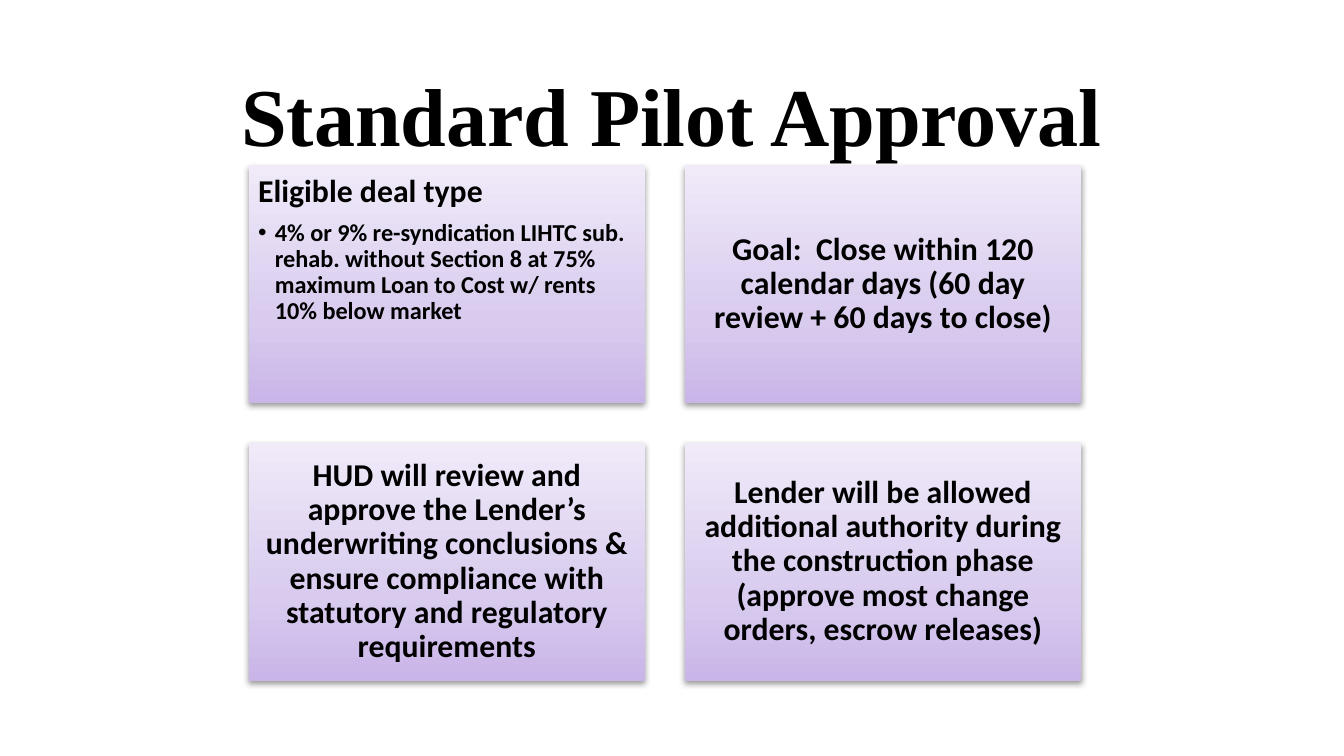
from dataclasses import dataclass

from lxml import etree
from pptx import Presentation
from pptx.dml.color import RGBColor
from pptx.enum.shapes import MSO_SHAPE
from pptx.enum.text import MSO_ANCHOR, MSO_AUTO_SIZE, PP_ALIGN
from pptx.oxml.ns import qn
from pptx.shapes.autoshape import Shape
from pptx.slide import Slide
from pptx.util import Emu, Pt

RECTANGLE = MSO_SHAPE.RECTANGLE
TOP, MIDDLE = MSO_ANCHOR.TOP, MSO_ANCHOR.MIDDLE
LEFT, CENTER = PP_ALIGN.LEFT, PP_ALIGN.CENTER
NO_AUTOFIT = MSO_AUTO_SIZE.NONE
EMU_PER_PX = 4572  # 200 px to the inch


@dataclass(frozen=True)
class Theme:
    ink: str = "000000"
    shadow: str = "000000"
    gradient: tuple[tuple[int, str], ...] = (
        (0, "C9B5E8"), (35, "D8CBEE"), (100, "F0EAF9"))
    title_font: str = "Times New Roman"
    body_font: str = "Calibri"
    title_size: int = 44
    heading_size: int = 17
    bullet_size: int = 13


@dataclass(frozen=True)
class Card:
    heading: str
    bullets: tuple[str, ...] = ()


THEME = Theme()

# Page and card grid, in px
PAGE_WIDTH, PAGE_HEIGHT = 2000, 1125
GRID_LEFT, GRID_TOP = 370, 246
CARD_WIDTH, CARD_HEIGHT = 590, 354
GAP, COLUMNS = 59, 2
INSET, BULLET_INDENT = 14, 25

CARDS = (
    Card("Eligible deal type", (
        "4% or 9% re-syndication LIHTC sub. rehab. without Section 8 at 75% "
        "maximum Loan to Cost w/ rents 10% below market",)),
    Card("Goal:  Close within 120 calendar days "
         "(60 day review + 60 days to close)"),
    Card("HUD will review and approve the Lender’s underwriting conclusions & "
         "ensure compliance with statutory and regulatory requirements"),
    Card("Lender will be allowed additional authority during the construction "
         "phase (approve most change orders, escrow releases)"),
)


def px(length: int) -> Emu:
    return Emu(length * EMU_PER_PX)


def place(shape: Shape, left: int, top: int, width: int, height: int) -> None:
    shape.left, shape.top = px(left), px(top)
    shape.width, shape.height = px(width), px(height)


def style_font(para, name: str, size: int) -> None:
    font = para.font
    font.name, font.size, font.bold = name, Pt(size), True
    font.color.rgb = RGBColor.from_string(THEME.ink)


def add_color(parent, color: str):
    return etree.SubElement(parent, qn("a:srgbClr"), val=color)


def paint_card(box: Shape) -> None:
    """Three-stop gradient, no outline and a soft shadow below."""
    box.line.fill.background()
    box.fill.gradient()
    box.fill.gradient_angle = 90
    properties = box.element.spPr
    stops = properties.find(f"{qn('a:gradFill')}/{qn('a:gsLst')}")
    for stop in list(stops):
        stops.remove(stop)
    for position, color in THEME.gradient:
        stop = etree.SubElement(stops, qn("a:gs"), pos=str(position * 1000))
        add_color(stop, color)

    box.shadow.inherit = False
    shadow = etree.SubElement(
        properties.find(qn("a:effectLst")), qn("a:outerShdw"),
        blurRad="40000", dist="20000", dir="5400000", rotWithShape="0")
    etree.SubElement(add_color(shadow, THEME.shadow), qn("a:alpha"), val="38000")


def add_bullet(para) -> None:
    properties = para._p.get_or_add_pPr()
    properties.set("marL", str(px(BULLET_INDENT)))
    properties.set("indent", str(-px(BULLET_INDENT)))
    etree.SubElement(properties, qn("a:buFont"), typeface="Arial")
    etree.SubElement(properties, qn("a:buChar"), char="•")


def add_card(page: Slide, card: Card, left: int, top: int) -> None:
    box = page.shapes.add_shape(
        RECTANGLE, px(left), px(top), px(CARD_WIDTH), px(CARD_HEIGHT))
    paint_card(box)
    frame = box.text_frame
    frame.word_wrap = True
    frame.vertical_anchor = TOP if card.bullets else MIDDLE
    frame.margin_left = frame.margin_right = px(INSET)
    frame.margin_top = frame.margin_bottom = px(INSET)

    heading = frame.paragraphs[0]
    heading.text = card.heading
    heading.alignment = LEFT if card.bullets else CENTER
    heading.line_spacing = 0.9
    heading.space_after = Pt(6 if card.bullets else 0)
    style_font(heading, THEME.body_font, THEME.heading_size)

    for text in card.bullets:
        para = frame.add_paragraph()
        para.text = text
        para.level = 1
        para.alignment = LEFT
        para.line_spacing = 0.9
        para.space_after = Pt(2)
        add_bullet(para)
        style_font(para, THEME.body_font, THEME.bullet_size)


def add_title(page: Slide, text: str) -> None:
    title = page.shapes.title
    place(title, 138, 60, 1724, 218)
    frame = title.text_frame
    frame.auto_size = NO_AUTOFIT
    frame.vertical_anchor = MIDDLE
    para = frame.paragraphs[0]
    para.text = text
    para.alignment = CENTER
    style_font(para, THEME.title_font, THEME.title_size)


def main() -> None:
    deck = Presentation()
    deck.slide_width, deck.slide_height = px(PAGE_WIDTH), px(PAGE_HEIGHT)
    page = deck.slides.add_slide(deck.slide_layouts.get_by_name("Title Only"))

    # Title
    add_title(page, "Standard Pilot Approval")

    # Two-by-two grid of cards
    for index, card in enumerate(CARDS):
        row, column = divmod(index, COLUMNS)
        add_card(page, card,
                 GRID_LEFT + column * (CARD_WIDTH + GAP),
                 GRID_TOP + row * (CARD_HEIGHT + GAP))

    deck.save("out.pptx")


if __name__ == "__main__":
    main()
